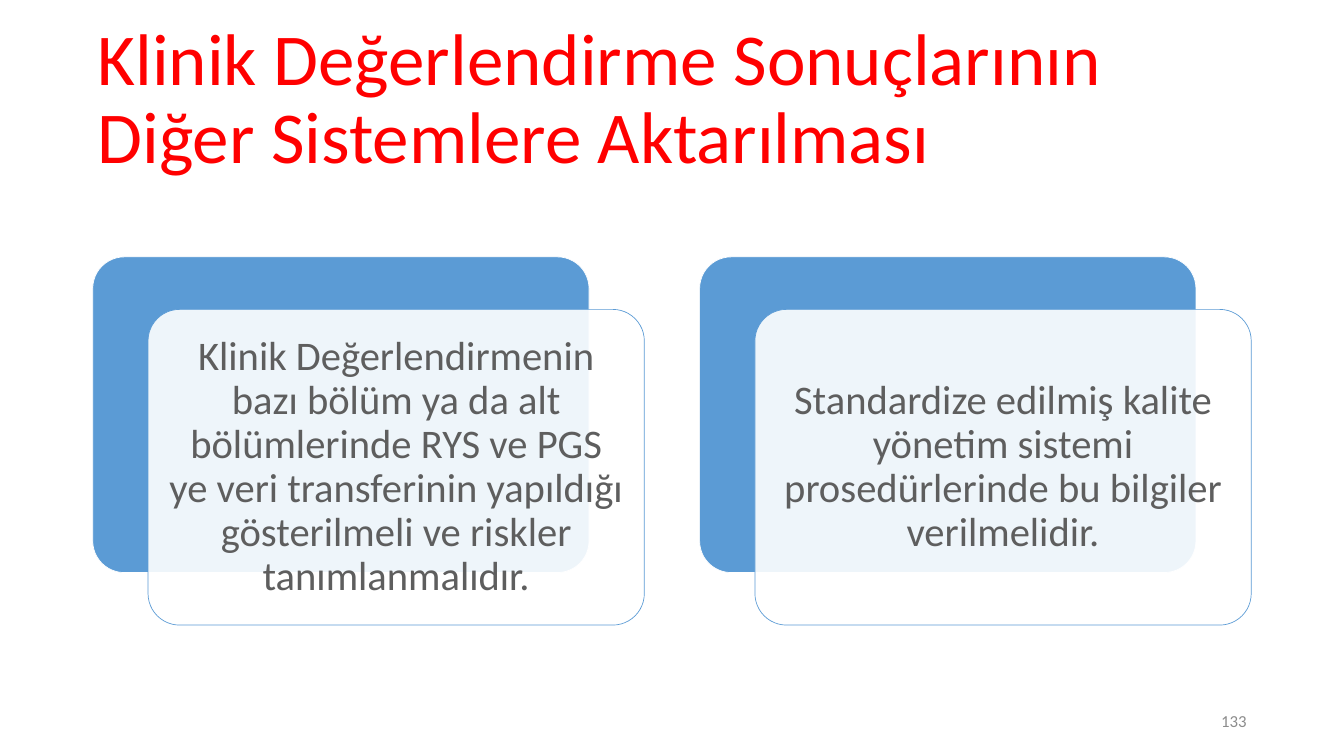
"""Build the slide on passing clinical evaluation results to other systems."""
from lxml.etree import SubElement as Sub
from pptx import Presentation as Deck
from pptx.dml.color import RGBColor as Rgb
from pptx.enum.shapes import MSO_SHAPE as Kind
from pptx.enum.text import MSO_ANCHOR as Anchor, MSO_AUTO_SIZE as Fit, PP_ALIGN as Align
from pptx.oxml.ns import qn
from pptx.util import Pt

HUES = {"title": "FF0000", "blue": "5B9BD5", "white": "FFFFFF",
        "text": "5E5E5E", "page": "8C8C8C"}
TITLE = "Klinik Değerlendirme Sonuçlarının Diğer Sistemlere Aktarılması"
CARDS = [
    "Klinik Değerlendirmenin bazı bölüm ya da alt bölümlerinde RYS ve PGS "
    "ye veri transferinin yapıldığı gösterilmeli ve riskler tanımlanmalıdır.",
    "Standardize edilmiş kalite yönetim sistemi prosedürlerinde bu bilgiler "
    "verilmelidir.",
]
LEFT, TOP, WIDE, HIGH = 132.5, 367, 709, 451
STEP, SHIFT, DROP = 867, 79, 75


def hue(name):
    return Rgb.from_string(HUES[name])


def write(shape, text, size, tint, align, space=0.9):
    frame = shape.text_frame
    frame.text = text
    frame.word_wrap = True
    frame.auto_size = Fit.NONE
    frame.vertical_anchor = Anchor.MIDDLE
    para = frame.paragraphs[0]
    para.alignment = align
    para.line_spacing = space
    font = para.runs[0].font
    font.name = "Calibri"
    font.size = Pt(size)
    font.color.rgb = hue(tint)
    return frame


def add_title(slide):
    title = slide.shapes.title
    title.left, title.top = Pt(132), Pt(88)
    title.width, title.height = Pt(1656), Pt(178.5)
    frame = write(title, TITLE, 104.4, "title", Align.LEFT)
    frame.margin_bottom = Pt(70)


def add_panel(slide, left, top, fill, line):
    panel = slide.shapes.add_shape(
        Kind.ROUNDED_RECTANGLE, Pt(left), Pt(top), Pt(WIDE), Pt(HIGH))
    panel.adjustments[0] = 0.1
    panel.shadow.inherit = False
    panel.fill.solid()
    panel.fill.fore_color.rgb = hue(fill)
    panel.line.color.rgb = hue(line)
    panel.line.width = Pt(1)
    return panel


def add_card(slide, left, text):
    add_panel(slide, left, TOP, "blue", "white")
    front = add_panel(slide, left + SHIFT, TOP + DROP, "white", "blue")
    color = front._element.spPr.find(qn("a:solidFill"))[0]
    Sub(color, qn("a:alpha"), val="90000")
    frame = write(front, text, 58, "text", Align.CENTER)
    frame.margin_left = frame.margin_right = Pt(17)
    frame.margin_top = frame.margin_bottom = Pt(17)


def add_page(slide, text):
    box = slide.shapes.add_textbox(Pt(1356), Pt(1001), Pt(432), Pt(57.5))
    write(box, text, 24, "page", Align.RIGHT, 1)


def main():
    deck = Deck()
    deck.slide_width, deck.slide_height = Pt(1920), Pt(1080)
    slide = deck.slides.add_slide(deck.slide_layouts[5])
    add_title(slide)
    for i, text in enumerate(CARDS):
        add_card(slide, LEFT + i * STEP, text)
    add_page(slide, "133")
    deck.save("out.pptx")


if __name__ == "__main__":
    main()
